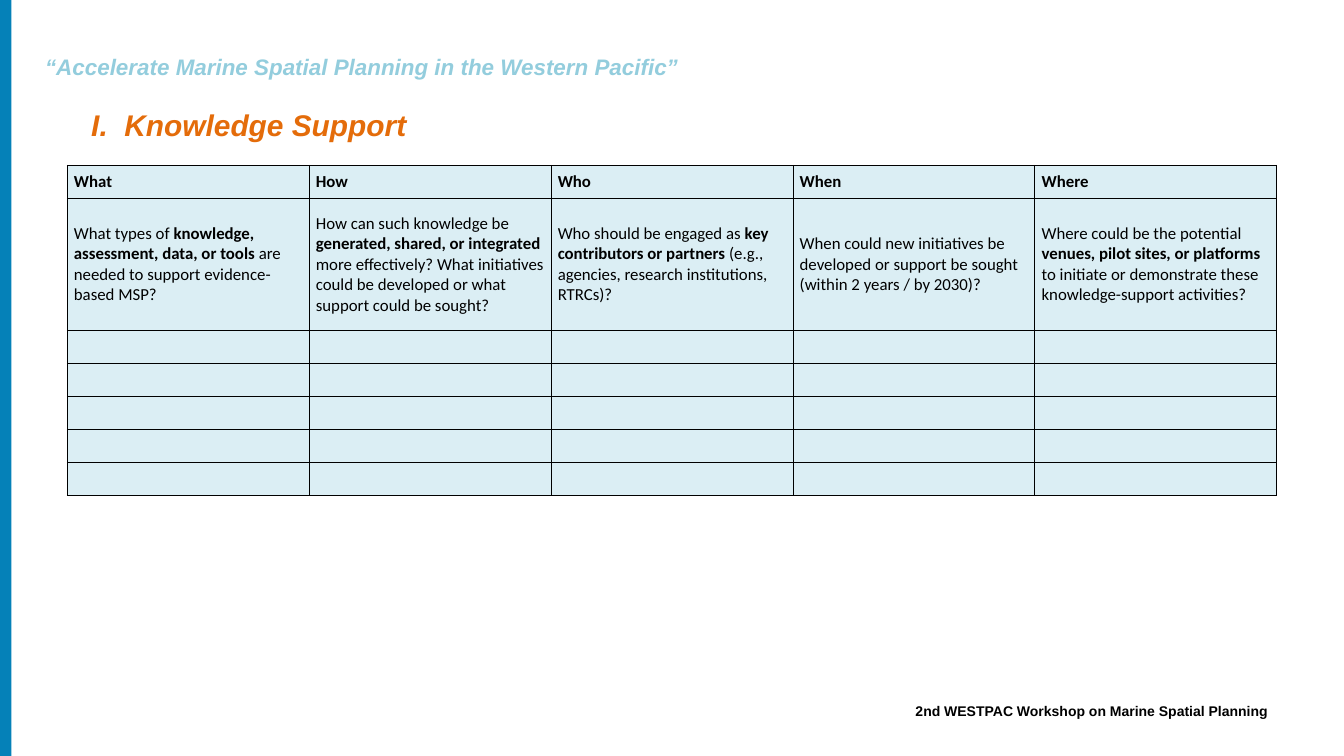
from lxml import etree
from pptx import Presentation
from pptx import util as u
from pptx.dml.color import RGBColor
from pptx.enum import shapes, text
from pptx.oxml import ns

BLUE = RGBColor(0x05, 0x81, 0xB8)
SKY = RGBColor(0x93, 0xCD, 0xDD)
ORANGE = RGBColor(0xE4, 0x6C, 0x0A)
PALE = RGBColor(0xDB, 0xEE, 0xF4)
BLACK = RGBColor(0, 0, 0)

# Content: each question is (text before, bold part, text after)
MOTTO = "“Accelerate Marine Spatial Planning in the Western Pacific”"
TITLE = "I.  Knowledge Support"
FOOTER = "2nd WESTPAC Workshop on Marine Spatial Planning"
TOPICS = [
    ("What", ("What types of ", "knowledge, assessment, data, or tools",
              " are needed to support evidence-based MSP?")),
    ("How", ("How can such knowledge be ", "generated, shared, or integrated",
             " more effectively? What initiatives could be developed"
             " or what support could be sought?")),
    ("Who", ("Who should be engaged as ", "key contributors or partners",
             " (e.g., agencies, research institutions, RTRCs)?")),
    ("When", ("When could new initiatives be developed or support be sought"
              " (within 2 years / by 2030)?", "", "")),
    ("Where", ("Where could be the potential ",
               "venues, pilot sites, or platforms",
               " to initiate or demonstrate these"
               " knowledge-support activities?")),
]
BLANKS = 5

# Text formats
HEAD = dict(name="Calibri", size=u.Pt(18), bold=True)
BODY = dict(HEAD, bold=False)
LEFT, RIGHT = text.PP_ALIGN.LEFT, text.PP_ALIGN.RIGHT
TOP, MIDDLE = text.MSO_ANCHOR.TOP, text.MSO_ANCHOR.MIDDLE
# words, (left, top, width, height), inset, align, anchor, format, colour
BOXES = [
    (FOOTER, (10.19, 10.46, 8.68, 0.25), (0, 0), RIGHT, MIDDLE,
     dict(name="Arial", size=u.Pt(15), bold=True), BLACK),
    (MOTTO, (0.67, 0.79, 13.42, 0.4), (0, 0), LEFT, TOP,
     dict(name="Arial", size=u.Pt(24), bold=True, italic=True), SKY),
    (TITLE, (1.26, 1.54, 8.67, 0.64), (0.1, 0.05), LEFT, TOP,
     dict(name="Arial", size=u.Pt(32), bold=True, italic=True), ORANGE),
]


def add_run(para, words, style, color):
    run = para.add_run()
    run.text = words
    for key, value in style.items():
        setattr(run.font, key, value)
    run.font.color.rgb = color


def add_box(slide, words, area, inset, align, anchor, style, color):
    frame = slide.shapes.add_textbox(*map(u.Inches, area)).text_frame
    frame.word_wrap = True
    frame.vertical_anchor = anchor
    frame.margin_left = frame.margin_right = u.Inches(inset[0])
    frame.margin_top = frame.margin_bottom = u.Inches(inset[1])
    para = frame.paragraphs[0]
    para.alignment = align
    add_run(para, words, style, color)


def add_edges(cell):
    props = cell._tc.get_or_add_tcPr()
    for side in ("a:lnL", "a:lnR", "a:lnT", "a:lnB"):
        line = etree.SubElement(props, ns.qn(side), w=str(u.Pt(1)))
        fill = etree.SubElement(line, ns.qn("a:solidFill"))
        etree.SubElement(fill, ns.qn("a:srgbClr"), val=str(BLACK))


def add_grid(slide):
    heights = [0.49, 1.97] + [0.49] * BLANKS
    table = slide.shapes.add_table(
        len(heights), len(TOPICS), u.Inches(1), u.Inches(2.46),
        u.Inches(18), u.Inches(sum(heights))).table
    for row, height in zip(table.rows, heights):
        row.height = u.Inches(height)
    for cell in table.iter_cells():
        add_edges(cell)
        cell.fill.solid()
        cell.fill.fore_color.rgb = PALE
        cell.vertical_anchor = MIDDLE
    for col, (head, parts) in enumerate(TOPICS):
        table.columns[col].width = u.Inches(18 / len(TOPICS))
        add_run(table.cell(0, col).text_frame.paragraphs[0], head, HEAD, BLACK)
        para = table.cell(1, col).text_frame.paragraphs[0]
        for part, style in zip(parts, (BODY, HEAD, BODY)):
            if part:
                add_run(para, part, style, BLACK)


def main():
    deck = Presentation()
    deck.slide_width, deck.slide_height = u.Inches(20), u.Inches(11.25)
    slide = deck.slides.add_slide(deck.slide_layouts[6])

    # Side band
    band = slide.shapes.add_shape(shapes.MSO_SHAPE.RECTANGLE, 0, 0,
                                  u.Inches(0.17), deck.slide_height)
    band.shadow.inherit = False
    band.fill.solid()
    band.fill.fore_color.rgb = BLUE
    band.line.fill.background()

    # Question table, then footer, motto and title
    add_grid(slide)
    for box in BOXES:
        add_box(slide, *box)
    deck.save("out.pptx")


if __name__ == "__main__":
    main()
